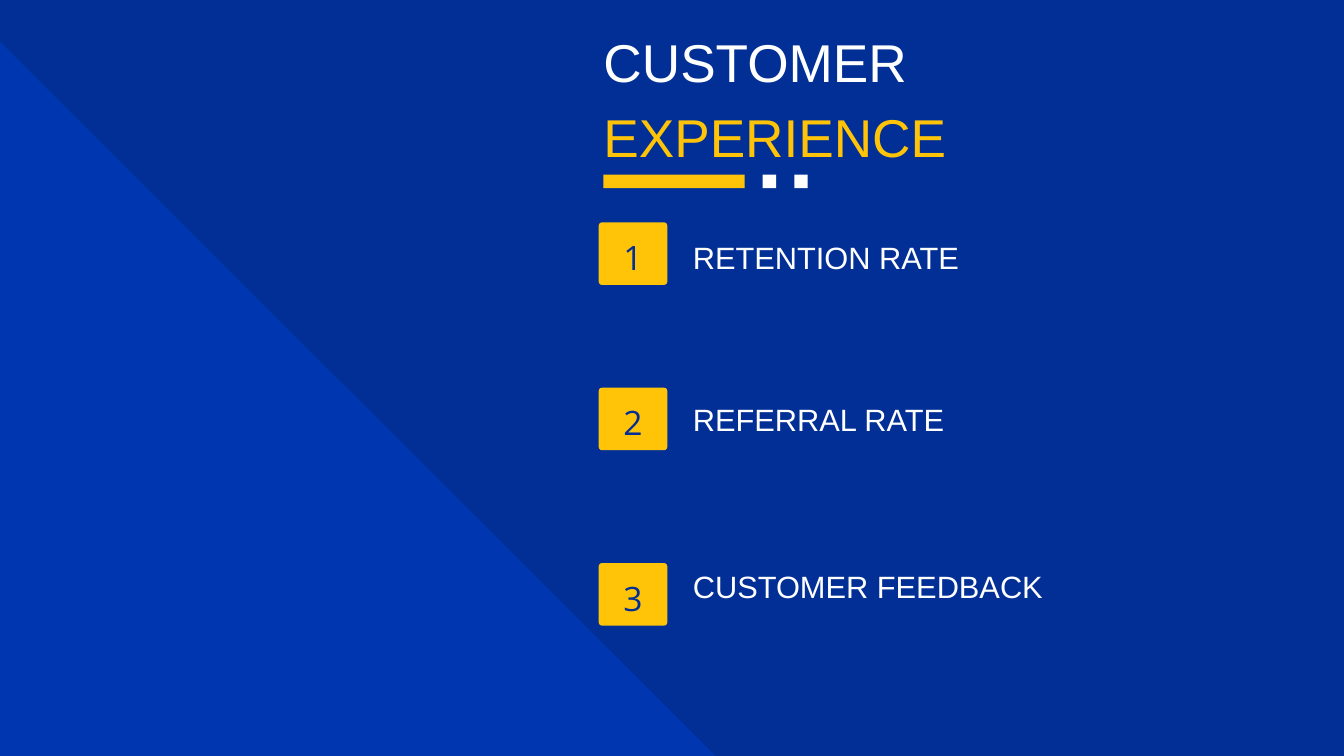
import pptx
import pptx.util
import pptx.dml.color
import pptx.enum.shapes
import pptx.enum.text

Inches = pptx.util.Inches
Pt = pptx.util.Pt
RGBColor = pptx.dml.color.RGBColor
Shape = pptx.enum.shapes.MSO_SHAPE
Align = pptx.enum.text.PP_ALIGN

NAVY = RGBColor(0x01, 0x2F, 0x96)
BLUE = RGBColor(0x00, 0x36, 0xAF)
YELLOW = RGBColor(0xFF, 0xC4, 0x08)
WHITE = RGBColor(0xFF, 0xFF, 0xFF)

# Content
TITLE = [("CUSTOMER ", WHITE), ("EXPERIENCE", YELLOW)]
# number, label, top of badge, top of label, width of label
MEASURES = [
    ("1", "RETENTION RATE", 3.31, 3.46, 6.17),
    ("2", "REFERRAL RATE", 5.77, 5.87, 6.94),
    ("3", "CUSTOMER FEEDBACK", 8.38, 8.36, 6.94),
]
# left, width, colour of each piece of the title rule
RULE_PIECES = [(8.98, 2.1, YELLOW), (11.35, 0.2, WHITE), (11.82, 0.2, WHITE)]

# Layout in inches
SLIDE_WIDTH, SLIDE_HEIGHT = 20, 11.25
TITLE_BOX = (8.98, 0.28, 8.28, 2.17)
RULE_TOP, RULE_HEIGHT = 2.6, 0.2
BADGE_LEFT, BADGE_WIDTH, BADGE_HEIGHT = 8.91, 1.02, 0.93
BADGE_INSET = 0.1
LABEL_LEFT, LABEL_HEIGHT = 10.31, 0.63

# Text formats
TITLE_FONT = {"name": "Arial", "size": Pt(57), "bold": False}
NUMBER_FONT = {"name": "Open Sans", "size": Pt(36)}
LABEL_FONT = {"name": "Arial", "size": Pt(33)}
FRAME_FORMAT = {
    "margin_left": 0, "margin_top": 0, "margin_right": 0, "margin_bottom": 0,
    "word_wrap": True,
    "auto_size": pptx.enum.text.MSO_AUTO_SIZE.NONE,
    "vertical_anchor": pptx.enum.text.MSO_ANCHOR.TOP,
}


def apply_format(target, values):
    for name, value in values.items():
        setattr(target, name, value)


def add_block(slide, kind, box, colour):
    shape = slide.shapes.add_shape(kind, *map(Inches, box))
    shape.shadow.inherit = False
    shape.fill.solid()
    shape.fill.fore_color.rgb = colour
    shape.line.fill.background()
    return shape


def write_text(shape, pieces, font, alignment, line_spacing):
    apply_format(shape.text_frame, FRAME_FORMAT)
    paragraph = shape.text_frame.paragraphs[0]
    apply_format(paragraph, {"alignment": alignment, "space_before": Pt(0),
                             "line_spacing": Pt(line_spacing)})
    for text, colour in pieces:
        run = paragraph.add_run()
        run.text = text
        apply_format(run.font, font)
        run.font.color.rgb = colour


def main():
    presentation = pptx.Presentation()
    presentation.slide_width = Inches(SLIDE_WIDTH)
    presentation.slide_height = Inches(SLIDE_HEIGHT)
    slide = presentation.slides.add_slide(presentation.slide_layouts[5])
    slide.background.fill.solid()
    slide.background.fill.fore_color.rgb = NAVY

    # Corner triangle
    add_block(slide, Shape.RIGHT_TRIANGLE, (0, 0.62, 10.68, 10.66), BLUE)

    # Title and the rule under it
    title = slide.shapes.title
    for side, length in zip(("left", "top", "width", "height"), TITLE_BOX):
        setattr(title, side, Inches(length))
    write_text(title, TITLE, TITLE_FONT, Align.LEFT, 79.8)
    for left, width, colour in RULE_PIECES:
        add_block(slide, Shape.RECTANGLE,
                  (left, RULE_TOP, width, RULE_HEIGHT), colour)

    # Numbered measures
    for number, label, badge_top, label_top, label_width in MEASURES:
        badge = add_block(slide, Shape.ROUNDED_RECTANGLE,
                          (BADGE_LEFT, badge_top, BADGE_WIDTH, BADGE_HEIGHT),
                          YELLOW)
        badge.adjustments[0] = 0.05
        write_text(badge, [(number, NAVY)], NUMBER_FONT, Align.CENTER, 50.4)
        badge.text_frame.margin_top = Inches(BADGE_INSET)

        label_box = slide.shapes.add_textbox(
            *map(Inches, (LABEL_LEFT, label_top, label_width, LABEL_HEIGHT)))
        write_text(label_box, [(label, WHITE)], LABEL_FONT, Align.JUSTIFY, 46.2)

    presentation.save("out.pptx")


if __name__ == "__main__":
    main()
